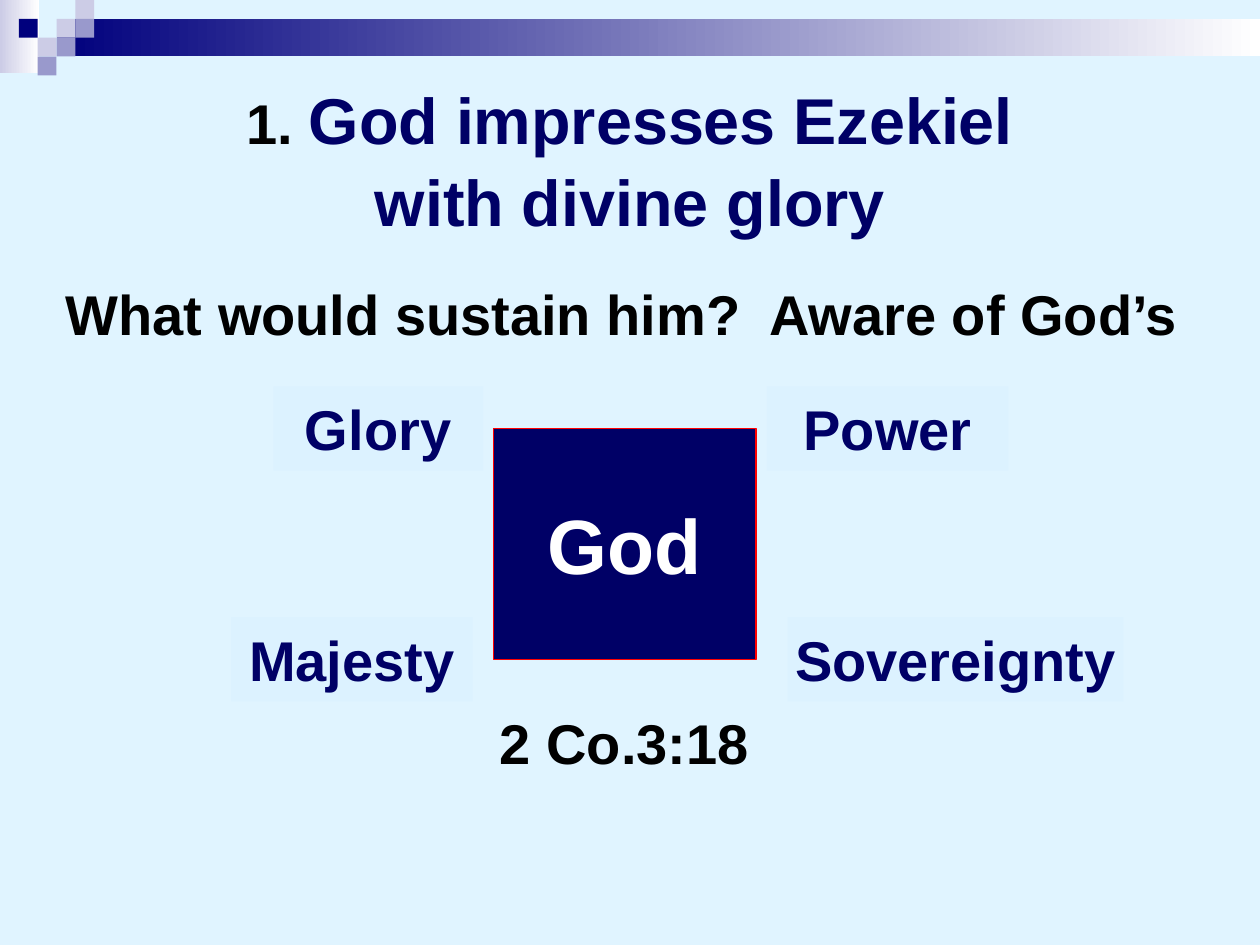
from lxml import etree
from pptx import Presentation
from pptx.dml.color import RGBColor
from pptx.enum.shapes import MSO_SHAPE
from pptx.enum.text import MSO_ANCHOR, PP_ALIGN
from pptx.oxml.ns import qn
from pptx.util import Cm, Pt

RECTANGLE = MSO_SHAPE.RECTANGLE
TOP, MIDDLE = MSO_ANCHOR.TOP, MSO_ANCHOR.MIDDLE
LEFT, CENTER = PP_ALIGN.LEFT, PP_ALIGN.CENTER

BACKGROUND = RGBColor(0xE0, 0xF4, 0xFF)
PALE_BLUE = RGBColor(0xCC, 0xEC, 0xFF)
NAVY = RGBColor(0x00, 0x00, 0x66)
DEEP_BLUE = RGBColor(0x00, 0x00, 0x7D)
LAVENDER = RGBColor(0xCC, 0xCC, 0xE6)
VIOLET = RGBColor(0x99, 0x99, 0xCC)
RED = RGBColor(0xFF, 0x00, 0x00)
BLACK = RGBColor(0x00, 0x00, 0x00)
WHITE = RGBColor(0xFF, 0xFF, 0xFF)


def write_text(shape, text, size=32, color=BLACK, align=CENTER, anchor=MIDDLE, wrap=True):
    """Append formatted text to the shape's first paragraph."""
    frame = shape.text_frame
    frame.word_wrap = wrap
    frame.vertical_anchor = anchor
    paragraph = frame.paragraphs[0]
    paragraph.alignment = align
    for index, line in enumerate(text.split("\n")):
        if index:
            paragraph.add_line_break()
        run = paragraph.add_run()
        run.text = line
        run.font.name = "Arial"
        run.font.size = Pt(size)
        run.font.bold = True
        run.font.color.rgb = color
    return paragraph


def place(shape, left, top, width, height):
    shape.left, shape.top = Cm(left), Cm(top)
    shape.width, shape.height = Cm(width), Cm(height)


def add_rectangle(slide, left, top, width, height, color, fade=False, opacity=None, line=None):
    shape = slide.shapes.add_shape(RECTANGLE, Cm(left), Cm(top), Cm(width), Cm(height))
    shape.shadow.inherit = False
    if fade:
        shape.fill.gradient()
        shape.fill.gradient_angle = 0
        for stop, stop_color, position in zip(shape.fill.gradient_stops, (color, WHITE), (0, 1)):
            stop.color.rgb = stop_color
            stop.position = position
    else:
        shape.fill.solid()
        shape.fill.fore_color.rgb = color
    if opacity is not None:
        color_element = shape.fill._xPr.find(qn("a:solidFill"))[0]
        etree.SubElement(color_element, qn("a:alpha")).set("val", str(opacity * 1000))
    if line is None:
        shape.line.fill.background()
    else:
        shape.line.color.rgb = line
        shape.line.width = Pt(0.75)
    return shape


def add_header_band(slide, left, top, width):
    """Fading bars with a mosaic of small squares at their left end."""
    unit = 0.38
    add_rectangle(slide, left, top, 0.79, 1.47, LAVENDER, fade=True)
    add_rectangle(slide, left + 3 * unit, top + unit, width - 3 * unit, 2 * unit,
                  DEEP_BLUE, fade=True)
    mosaic = [(3, 1, LAVENDER), (4, 0, LAVENDER), (4, 1, VIOLET), (2, 2, LAVENDER),
              (1, 1, DEEP_BLUE), (3, 2, VIOLET), (2, 3, VIOLET)]
    for column, row, color in mosaic:
        add_rectangle(slide, left + column * unit, top + row * unit, unit, unit, color)


def add_title(slide, left, top, width, height):
    title = slide.shapes.title
    place(title, left, top, width, height)
    write_text(title, "1. ")
    paragraph = write_text(title, "God impresses Ezekiel\nwith divine glory", size=37, color=NAVY)
    paragraph.line_spacing = 1.05


def add_question(slide, left, top, width, height):
    body = slide.placeholders[1]
    place(body, left, top, width, height)
    paragraph = write_text(body, "What would sustain him?  Aware of God’s", align=LEFT, anchor=TOP)
    paragraph.space_before = Pt(3)
    properties = paragraph._p.get_or_add_pPr()
    properties.set("marL", "0")
    properties.set("indent", "0")
    etree.SubElement(properties, qn("a:buNone"))


def add_attributes(slide, left, top):
    """Central square with one attribute label near each corner."""
    center = add_rectangle(slide, left + 5.29, top + 0.85, 5.29, 4.65, NAVY, line=RED)
    write_text(center, "God", size=44, color=WHITE, wrap=False)
    lower = 4.65
    labels = [("Glory", 0.85, 0, 4.23), ("Power", 10.8, 0, 4.87),
              ("Majesty", 0, lower, 4.87), ("Sovereignty", 11.22, lower, 6.77)]
    for text, offset_x, offset_y, width in labels:
        label = add_rectangle(slide, left + offset_x, top + offset_y, width, 1.7,
                              PALE_BLUE, opacity=20)
        write_text(label, text, color=NAVY, wrap=False)


def add_reference(slide, left, top, width, height):
    box = slide.shapes.add_textbox(Cm(left), Cm(top), Cm(width), Cm(height))
    write_text(box, "2 Co.3:18", anchor=TOP)


def main():
    presentation = Presentation()
    presentation.slide_width, presentation.slide_height = Cm(25.4), Cm(19.05)
    slide = presentation.slides.add_slide(presentation.slide_layouts[1])
    slide.background.fill.solid()
    slide.background.fill.fore_color.rgb = BACKGROUND

    add_header_band(slide, 0, 0, 25.4)
    add_title(slide, 1.27, 1.27, 22.86, 3.81)
    add_question(slide, 1.07, 5.51, 23.29, 12.27)
    add_attributes(slide, 4.66, 7.79)
    add_reference(slide, 9.73, 14.15, 5.72, 1.6)
    presentation.save("out.pptx")


if __name__ == "__main__":
    main()
